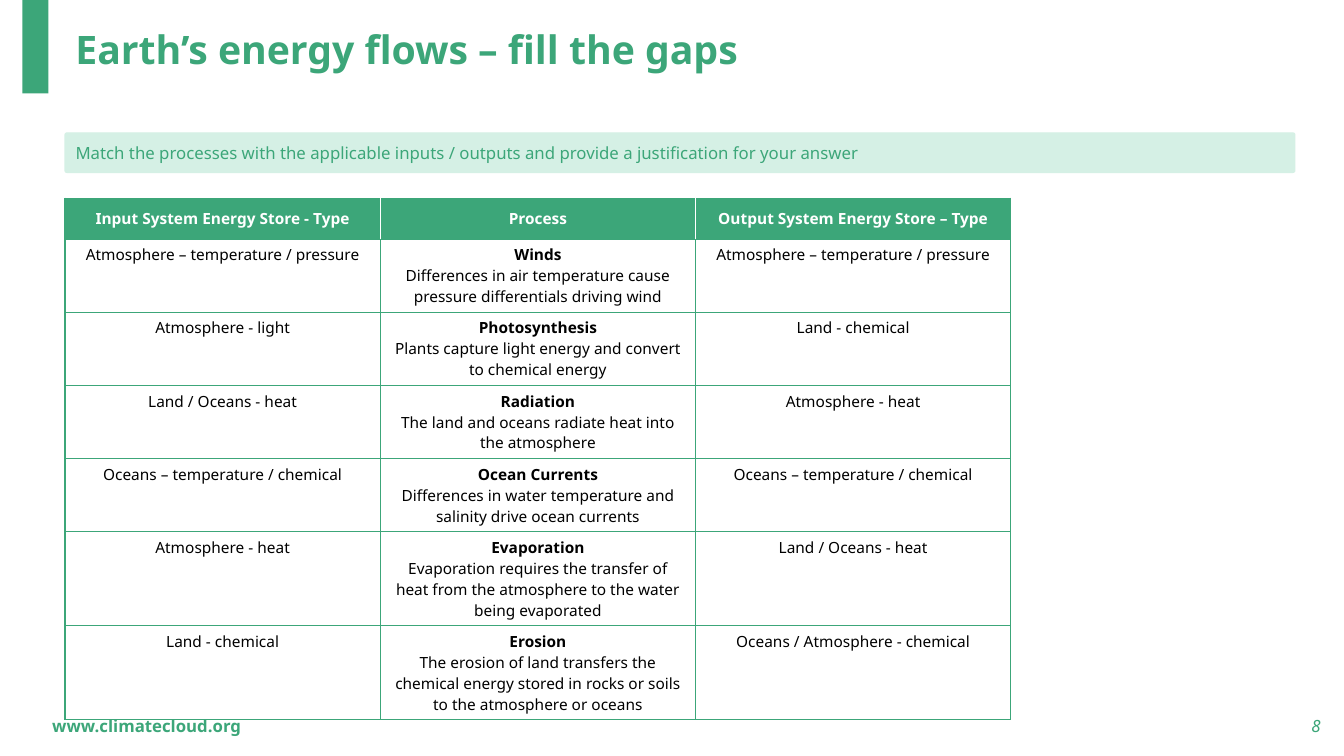
import dataclasses
import typing

import lxml.etree
import pptx
import pptx.dml.color
import pptx.enum.shapes
import pptx.enum.text
import pptx.oxml.ns
import pptx.util

Pt = pptx.util.Pt
Align = pptx.enum.text.PP_ALIGN
Anchor = pptx.enum.text.MSO_ANCHOR
Form = pptx.enum.shapes.MSO_SHAPE


@dataclasses.dataclass(frozen=True)
class Theme:
    font: str = "Noto Sans"
    green: str = "3CA679"
    pale: str = "D5F0E5"
    white: str = "FFFFFF"
    black: str = "000000"
    title: int = 28
    note: int = 12
    cell: int = 11


THEME = Theme()


@dataclasses.dataclass(frozen=True)
class Box:
    left: float
    top: float
    width: float
    height: float

    def place(self) -> tuple:
        return Pt(self.left), Pt(self.top), Pt(self.width), Pt(self.height)


@dataclasses.dataclass(frozen=True)
class Label:
    text: str
    box: Box
    size: int = THEME.note
    bold: bool = False
    slant: bool = False
    align: Align = Align.LEFT
    space: float = 1.0


@dataclasses.dataclass(frozen=True)
class Flow:
    input: str
    name: str
    detail: str
    output: str
    height: float


BAR = Box(16, 0, 18.72, 66.8)
TASK = Box(46.5, 95, 878.4, 28.08)
HEAD = 29.5
SHORT, TALL = 52.2, 67.2  # rows of three and of four lines

LABELS = [
    Label("Earth’s energy flows – fill the gaps", Box(46.8, 9.36, 772.56, 54.72),
          THEME.title, bold=True, space=0.9),
    Label("8", Box(734.4, 504, 216, 28.8), slant=True, align=Align.RIGHT),
    Label("www.climatecloud.org", Box(30.24, 504, 324, 28.8), bold=True),
]
PROMPT = Label("Match the processes with the applicable inputs / outputs "
               "and provide a justification for your answer", TASK)

HEADS = ["Input System Energy Store - Type", "Process",
         "Output System Energy Store – Type"]
FLOWS = [
    Flow("Atmosphere – temperature / pressure", "Winds",
         "Differences in air temperature cause pressure differentials driving wind",
         "Atmosphere – temperature / pressure", SHORT),
    Flow("Atmosphere - light", "Photosynthesis",
         "Plants capture light energy and convert to chemical energy",
         "Land - chemical", SHORT),
    Flow("Land / Oceans - heat", "Radiation",
         "The land and oceans radiate heat into the atmosphere",
         "Atmosphere - heat", SHORT),
    Flow("Oceans – temperature / chemical", "Ocean Currents",
         "Differences in water temperature and salinity drive ocean currents",
         "Oceans – temperature / chemical", SHORT),
    Flow("Atmosphere - heat", "Evaporation",
         "Evaporation requires the transfer of heat from the atmosphere "
         "to the water being evaporated",
         "Land / Oceans - heat", TALL),
    Flow("Land - chemical", "Erosion",
         "The erosion of land transfers the chemical energy stored in rocks "
         "or soils to the atmosphere or oceans",
         "Oceans / Atmosphere - chemical", TALL),
]
HEIGHTS = [HEAD] + [flow.height for flow in FLOWS]
GRID = Box(46.5, 141.5, 675.6, sum(HEIGHTS))


def shade(code: str) -> pptx.dml.color.RGBColor:
    return pptx.dml.color.RGBColor.from_string(code)


def style(line: typing.Any, size: int, tint: str, bold: bool, align: Align) -> None:
    line.alignment = align
    font = line.font
    font.name, font.size, font.bold = THEME.font, Pt(size), bold
    font.color.rgb = shade(tint)


def write(frame: typing.Any, label: Label) -> None:
    frame.word_wrap = True
    frame.vertical_anchor = Anchor.MIDDLE
    line = frame.paragraphs[0]
    line.text = label.text
    line.line_spacing = label.space
    style(line, label.size, THEME.green, label.bold, label.align)
    line.font.italic = label.slant


def block(slide: typing.Any, form: Form, box: Box, tint: str) -> typing.Any:
    shape = slide.shapes.add_shape(form, *box.place())
    shape.shadow.inherit = False
    shape.fill.solid()
    shape.fill.fore_color.rgb = shade(tint)
    shape.line.color.rgb = shade(tint)
    shape.line.width = Pt(1)
    return shape


def edge(cell: typing.Any, side: str, tint: str) -> None:
    name = pptx.oxml.ns.qn
    props = cell._tc.get_or_add_tcPr()
    line = lxml.etree.SubElement(props, name(f"a:ln{side}"), w=str(Pt(1)))
    fill = lxml.etree.SubElement(line, name("a:solidFill"))
    lxml.etree.SubElement(fill, name("a:srgbClr"), val=tint)


def fill_cell(cell: typing.Any, lines: list[str], col: int, head: bool) -> None:
    # Header cells are parted by white lines
    inner = THEME.white if head else THEME.green
    edge(cell, "L", inner if col > 0 else THEME.green)
    edge(cell, "R", inner if col < len(HEADS) - 1 else THEME.green)
    edge(cell, "T", THEME.green)
    edge(cell, "B", THEME.green)
    if head:
        cell.fill.solid()
        cell.fill.fore_color.rgb = shade(THEME.green)
    else:
        cell.fill.background()
    cell.vertical_anchor = Anchor.MIDDLE if head else Anchor.TOP
    cell.text = "\n".join(lines)
    for place, line in enumerate(cell.text_frame.paragraphs):
        bold = head or (len(lines) > 1 and place == 0)
        style(line, THEME.cell, THEME.white if head else THEME.black,
              bold, Align.CENTER)


def draw_grid(slide: typing.Any) -> None:
    rows = [[[head] for head in HEADS]]
    rows += [[[flow.input], [flow.name, flow.detail], [flow.output]]
             for flow in FLOWS]
    table = slide.shapes.add_table(len(rows), len(HEADS), *GRID.place()).table
    table.horz_banding = False
    for col in table.columns:
        col.width = Pt(GRID.width / len(HEADS))
    for row, cells in enumerate(rows):
        table.rows[row].height = Pt(HEIGHTS[row])
        for col, lines in enumerate(cells):
            fill_cell(table.cell(row, col), lines, col, row == 0)


def main() -> None:
    deck = pptx.Presentation()
    deck.slide_width, deck.slide_height = Pt(960), Pt(540)
    slide = deck.slides.add_slide(deck.slide_layouts[6])

    # Accent bar
    block(slide, Form.RECTANGLE, BAR, THEME.green).line.fill.background()

    # Title and footer
    for label in LABELS:
        write(slide.shapes.add_textbox(*label.box.place()).text_frame, label)

    # Table of energy flows
    draw_grid(slide)

    # Task prompt
    task = block(slide, Form.ROUNDED_RECTANGLE, TASK, THEME.pale)
    task.adjustments[0] = 0.05
    write(task.text_frame, PROMPT)

    deck.save("out.pptx")


if __name__ == "__main__":
    main()
